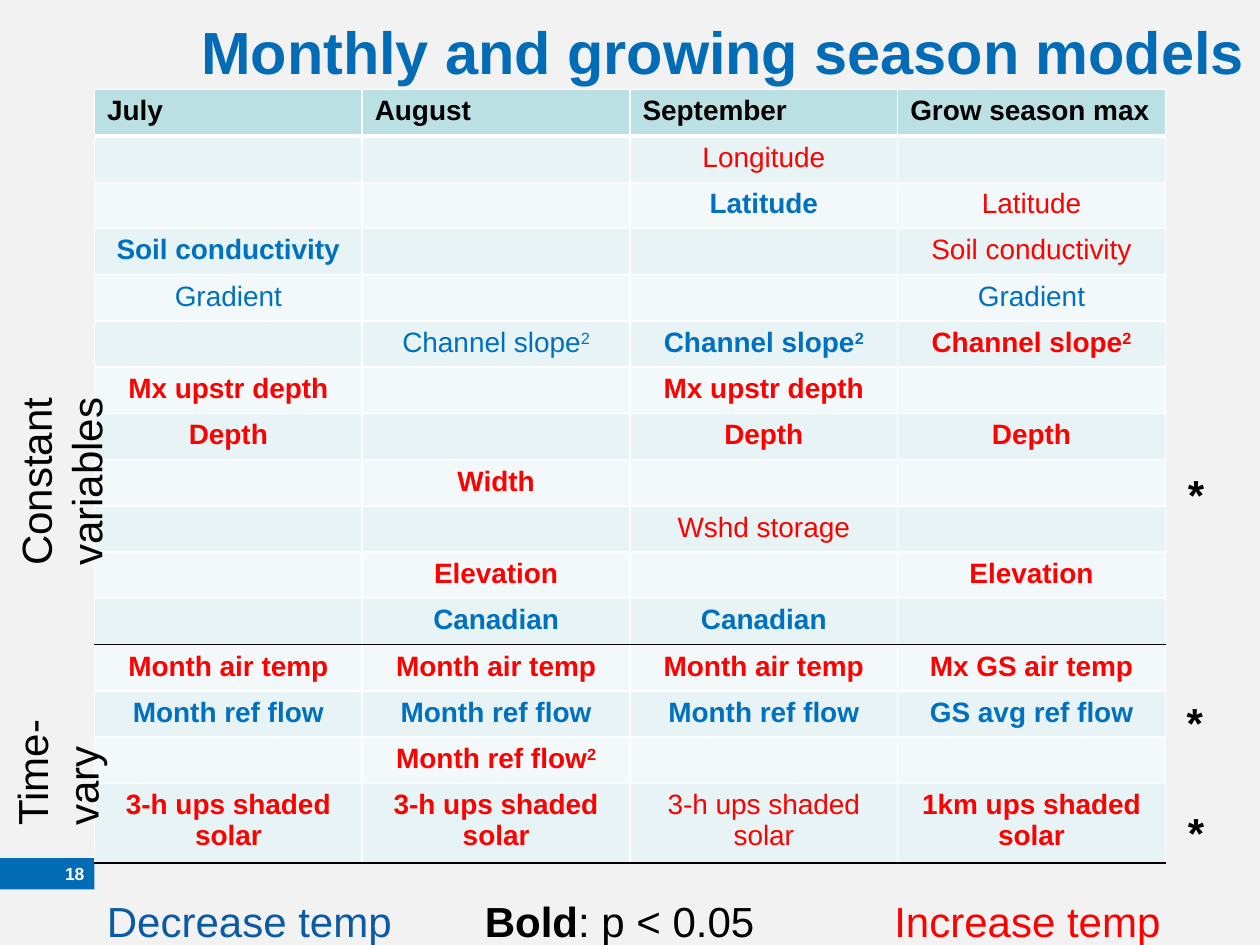
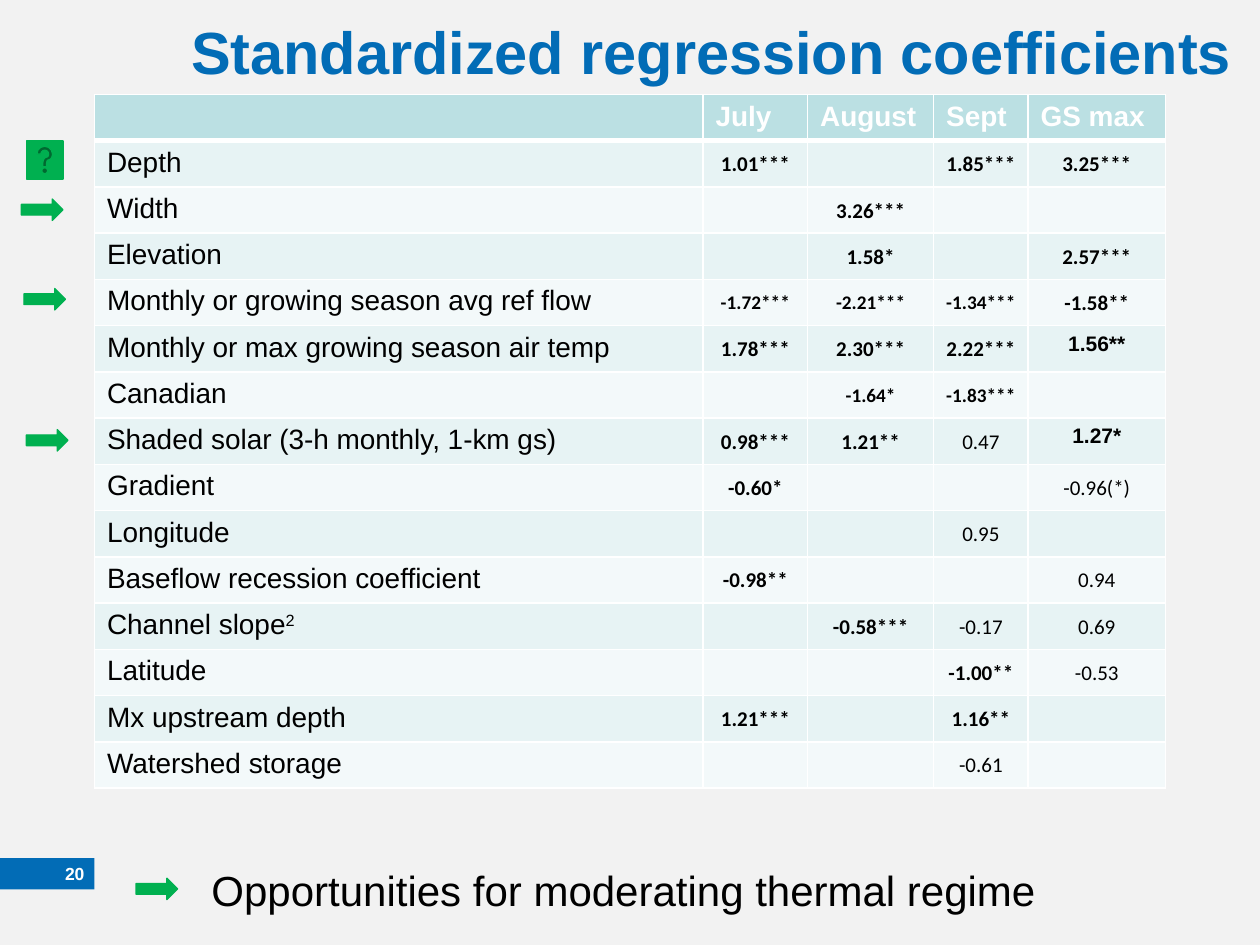
"""Build two slides on stream temperature models: selected variables and coefficients."""
from lxml import etree
from pptx import Presentation
from pptx.dml.color import RGBColor
from pptx.enum.shapes import MSO_SHAPE
from pptx.enum.text import MSO_ANCHOR, MSO_AUTO_SIZE, PP_ALIGN
from pptx.oxml.ns import qn
from pptx.util import Inches, Pt

RECT, ARROW, HELP = MSO_SHAPE.RECTANGLE, MSO_SHAPE.RIGHT_ARROW, MSO_SHAPE.ACTION_BUTTON_HELP
MIDDLE, GROW = MSO_ANCHOR.MIDDLE, MSO_AUTO_SIZE.SHAPE_TO_FIT_TEXT
CENTER, RIGHT = PP_ALIGN.CENTER, PP_ALIGN.RIGHT

HUES = {
    "page": "F2F2F2", "brand": "026CB6", "head": "BBE0E3", "odd": "E7F3F4",
    "even": "F3F9FA", "black": "000000", "white": "FFFFFF", "red": "FF0000",
    "blue": "0070C0", "navy": "0B5AA5", "green": "00B050",
}
RGB = {name: RGBColor.from_string(code) for name, code in HUES.items()}


def write(frame, text, size, hue="black", bold=False, face="Arial"):
    """Write one paragraph, raising whatever follows a caret."""
    para = frame.paragraphs[0]
    base, _, power = text.partition("^")
    para.add_run().text = base
    if power:
        run = para.add_run()
        run.text = power
        run.font._element.set("baseline", "30000")
    font = para.font
    font.name, font.size, font.bold = face, Pt(size), bold
    font.color.rgb = RGB[hue]
    return para


def grid(slide, top, cols, tall, rules):
    """Add a banded table whose rules give the line under certain rows."""
    frame = slide.shapes.add_table(len(tall), len(cols), Inches(0.75), Inches(top),
                                   Inches(sum(cols)), Inches(sum(tall)))
    table = frame.table
    table.first_row = table.horz_banding = False
    for col, width in zip(table.columns, cols):
        col.width = Inches(width)
    for r, (row, height) in enumerate(zip(table.rows, tall)):
        row.height = Inches(height)
        plain = ("white", 1)
        edges = {"lnL": plain, "lnR": plain, "lnT": rules.get(r - 1, plain),
                 "lnB": rules.get(r, plain)}
        for cell in row.cells:
            props = cell._tc.get_or_add_tcPr()
            for tag, (hue, width) in edges.items():
                line = etree.SubElement(props, qn("a:" + tag), w=str(Pt(width)))
                fill = etree.SubElement(line, qn("a:solidFill"))
                etree.SubElement(fill, qn("a:srgbClr"), val=HUES[hue])
            cell.fill.solid()
            cell.fill.fore_color.rgb = RGB["head" if r == 0 else "odd" if r % 2 else "even"]
            cell.margin_top = cell.margin_bottom = 0
    return table


deck = Presentation()
deck.slide_width, deck.slide_height = Inches(10), Inches(7.5)
back = deck.slide_master.background.fill
back.solid()
back.fore_color.rgb = RGB["page"]

slides = []
for title, left, number in [("Monthly and growing season models", 1.5, "18"),
                            ("Standardized regression coefficients", 1.42, "20")]:
    slide = deck.slides.add_slide(deck.slide_layouts[6])
    slides.append(slide)
    band = slide.shapes.add_shape(RECT, 0, Inches(6.81), Inches(0.75), Inches(0.25))
    band.shadow.inherit = False
    band.fill.solid()
    band.fill.fore_color.rgb = RGB["brand"]
    band.line.fill.background()
    frame = band.text_frame
    frame.margin_left = frame.margin_top = frame.margin_bottom = 0
    frame.margin_right = Inches(0.08)
    frame.vertical_anchor = MIDDLE
    write(frame, number, 10, "white", True).alignment = RIGHT
    box = slide.shapes.add_textbox(Inches(left), Inches(0.04), Inches(8.5), Inches(1.08))
    box.text_frame.word_wrap = True
    box.text_frame.margin_top = Inches(0.08)
    write(box.text_frame, title, 34, "brand", True)
models, coefs = slides

STYLES = {"r": ("red", False), "R": ("red", True), "b": ("blue", False),
          "B": ("blue", True), "K": ("black", True)}
picks = [
    ["K:July", "K:August", "K:September", "K:Grow season max"],
    ["", "", "r:Longitude", ""],
    ["", "", "B:Latitude", "r:Latitude"],
    ["B:Soil conductivity", "", "", "r:Soil conductivity"],
    ["b:Gradient", "", "", "b:Gradient"],
    ["", "b:Channel slope^2", "B:Channel slope^2", "R:Channel slope^2"],
    ["R:Mx upstr depth", "", "R:Mx upstr depth", ""],
    ["R:Depth", "", "R:Depth", "R:Depth"],
    ["", "R:Width", "", ""],
    ["", "", "r:Wshd storage", ""],
    ["", "R:Elevation", "", "R:Elevation"],
    ["", "B:Canadian", "B:Canadian", ""],
    ["R:Month air temp"] * 3 + ["R:Mx GS air temp"],
    ["B:Month ref flow"] * 3 + ["B:GS avg ref flow"],
    ["", "R:Month ref flow^2", "", ""],
    ["R:3-h ups shaded solar", "R:3-h ups shaded solar",
     "r:3-h ups shaded solar", "R:1km ups shaded solar"],
]
table = grid(models, 0.71, [2.125] * 4, [0.37] + [0.36] * 14 + [0.6],
             {0: ("white", 3), 11: ("black", 1), 15: ("black", 1)})
for r, row in enumerate(picks):
    for c, item in enumerate(row):
        if item:
            key, text = item.split(":")
            cell = table.cell(r, c)
            cell.margin_top = cell.margin_bottom = Inches(0.05)
            para = write(cell.text_frame, text, 16, *STYLES[key])
            if r:
                para.alignment = CENTER

notes = [
    (models, "Constant variables", 0.03, 1.67, 0.61, 2.92, "black", False),
    (models, "Time-vary", 0, 5.08, 0.61, 1.57, "black", False),
    (models, "Decrease temp", 0.75, 7.06, 2.5, 0.5, "navy", False),
    (models, "Increase temp", 7, 7.06, 2.5, 0.5, "red", False),
    (models, "Bold", 3.75, 7.06, 3, 0.5, "black", True),
    (models, "*", 9.33, 3.67, 0.42, 0.5, "black", True),
    (models, "*", 9.33, 6.35, 0.42, 0.5, "black", True),
    (models, "*", 9.32, 5.48, 0.42, 0.5, "black", True),
    (coefs, "Opportunities for moderating thermal regime", 1.58, 6.81, 7.42, 0.5, "black", False),
]
for slide, text, left, top, width, height, hue, bold in notes:
    box = slide.shapes.add_textbox(Inches(left), Inches(top), Inches(width), Inches(height))
    frame = box.text_frame
    frame.word_wrap = True
    frame.auto_size = GROW
    para = write(frame, text, 24, hue, bold)
    if width == 0.61:
        frame._txBody.bodyPr.set("vert", "vert270")
    if text == "Bold":
        run = para.add_run()
        run.text = ": p < 0.05"
        run.font.bold = False

values = [
    ["", "July", "August", "Sept", "GS max"],
    ["Depth", "1.01***", "", "1.85***", "3.25***"],
    ["Width", "", "3.26***", "", ""],
    ["Elevation", "", "1.58*", "", "2.57***"],
    ["Monthly or growing season avg ref flow", "-1.72***", "-2.21***", "-1.34***", "-1.58**"],
    ["Monthly or max growing season air temp", "1.78***", "2.30***", "2.22***", "1.56**"],
    ["Canadian", "", "-1.64*", "-1.83***", ""],
    ["Shaded solar (3-h monthly, 1-km gs)", "0.98***", "1.21**", "0.47", "1.27*"],
    ["Gradient", "-0.60*", "", "", "-0.96(*)"],
    ["Longitude", "", "", "0.95", ""],
    ["Baseflow recession coefficient", "-0.98**", "", "", "0.94"],
    ["Channel slope^2", "", "-0.58***", "-0.17", "0.69"],
    ["Latitude", "", "", "-1.00**", "-0.53"],
    ["Mx upstream depth", "1.21***", "", "1.16**", ""],
    ["Watershed storage", "", "", "-0.61", ""],
]
SMALL = {"-1.72***", "-2.21***", "-1.34***", "-1.64*", "-1.83***"}
SANS = {"1.56**", "1.27*"}
table = grid(coefs, 0.75, [4.83, 0.83, 1, 0.75, 1.09],
             [0.36] + [4.01 / 11] * 11 + [0.35, 0.35, 0.36], {0: ("white", 3)})
for r, row in enumerate(values):
    for c, text in enumerate(row):
        if not text:
            continue
        cell = table.cell(r, c)
        frame = cell.text_frame
        if r == 0 or c == 0 or text in SANS:
            cell.margin_top = cell.margin_bottom = Inches(0.05)
        if r == 0:
            write(frame, text, 16, "white", True)
        elif c == 0:
            write(frame, text, 16)
        elif text in SANS:
            write(frame, text, 12, bold=True).alignment = CENTER
        else:
            cell.margin_left = cell.margin_right = Inches(0.07)
            cell.vertical_anchor = MIDDLE
            para = write(frame, text, 11 if text in SMALL else 12,
                         bold=text.endswith("*"), face="Calibri")
            para.alignment = CENTER
            para.line_spacing, para.space_after = 1.07, Pt(8)

for kind, left, top, width, height in [
        (ARROW, 0.17, 1.58, 0.33, 0.17), (ARROW, 0.21, 3.41, 0.33, 0.17),
        (ARROW, 0.19, 2.29, 0.33, 0.17), (ARROW, 1.08, 6.97, 0.33, 0.17),
        (HELP, 0.21, 1.12, 0.29, 0.3)]:
    mark = coefs.shapes.add_shape(kind, Inches(left), Inches(top), Inches(width), Inches(height))
    mark.shadow.inherit = False
    mark.fill.solid()
    mark.fill.fore_color.rgb = mark.line.color.rgb = RGB["green"]
    mark.line.width = Pt(0.75)

deck.save("out.pptx")
